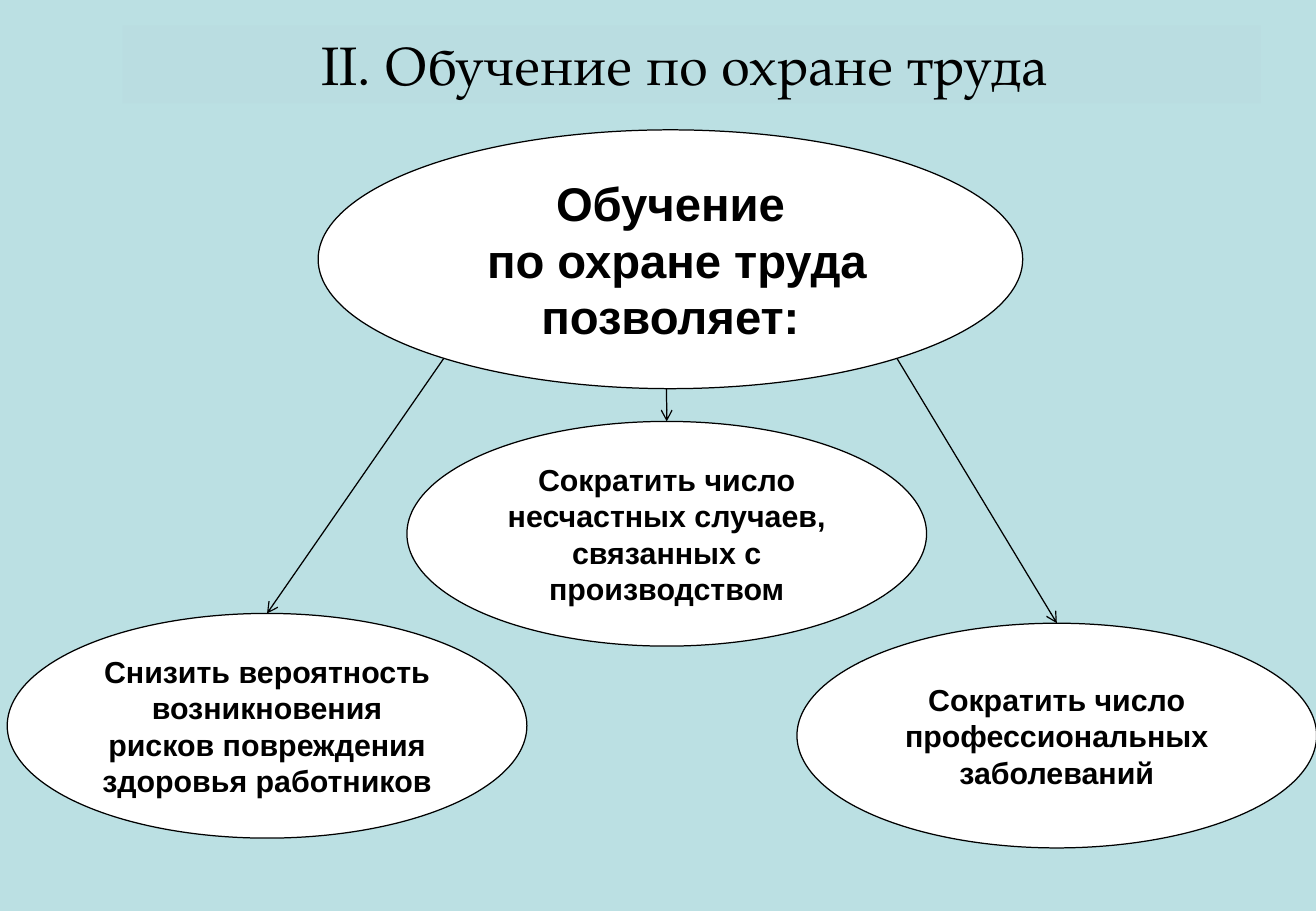
import pptx
import pptx.util
import pptx.dml.color
import pptx.enum.shapes
import pptx.enum.text
import pptx.oxml
import pptx.oxml.ns
from dataclasses import dataclass

Pt = pptx.util.Pt
Color = pptx.dml.color.RGBColor.from_string
Anchor = pptx.enum.text.MSO_ANCHOR
qn = pptx.oxml.ns.qn


@dataclass(frozen=True)
class Theme:
    back: str = "BBE0E3"
    band: str = "BADDE1"
    oval: str = "FFFFFF"
    ink: str = "000000"
    head: str = "TeX Gyre Pagella"
    body: str = "Arial"
    title: float = 32
    root: float = 28
    goal: float = 18
    line: float = 0.75


THEME = Theme()
ROOT = (188.6, 77, 417.6, 153.4)
GOAL = (308, 133.2)
GOALS = [  # left, top, arrow start, paragraphs
    (4.3, 363.6, (288, 176.4),
     ["Снизить вероятность возникновения рисков повреждения здоровья работников"]),
    (241.2, 249.8, (394.8, 188),
     ["Сократить число несчастных случаев,", "связанных с производством"]),
    (472.4, 369.4, (513.4, 182.2),
     ["Сократить число профессиональных заболеваний"]),
]


def write(shape, paras, font, size, bold, anchor):
    frame = shape.text_frame
    frame.word_wrap = True
    frame.auto_size = pptx.enum.text.MSO_AUTO_SIZE.NONE
    frame.vertical_anchor = anchor
    frame.margin_left = frame.margin_right = Pt(7.2)
    frame.margin_top = frame.margin_bottom = Pt(3.6)
    for i, text in enumerate(paras):
        para = frame.paragraphs[0] if i == 0 else frame.add_paragraph()
        para.alignment = pptx.enum.text.PP_ALIGN.CENTER
        run = para.add_run()
        run.text = text
        run.font.name = font
        run.font.size = Pt(size)
        run.font.bold = bold
        run.font.color.rgb = Color(THEME.ink)


def paint(shape, color):
    shape.fill.solid()
    shape.fill.fore_color.rgb = Color(color)


def ink(line):
    line.color.rgb = Color(THEME.ink)
    line.width = Pt(THEME.line)


def title(slide, box):
    shape = slide.shapes.title
    shape.left, shape.top, shape.width, shape.height = map(Pt, box)
    paint(shape, THEME.band)
    write(shape, ["II. Обучение по охране труда "], THEME.head, THEME.title,
          False, Anchor.TOP)


def oval(slide, box, paras, size):
    shape = slide.shapes.add_shape(
        pptx.enum.shapes.MSO_SHAPE.OVAL, *map(Pt, box))
    shape.shadow.inherit = False
    paint(shape, THEME.oval)
    ink(shape.line)
    write(shape, paras, THEME.body, size, True, Anchor.MIDDLE)
    return shape


def arrow(slide, start, end):
    link = slide.shapes.add_connector(
        pptx.enum.shapes.MSO_CONNECTOR.STRAIGHT, *map(Pt, start + end))
    ink(link.line)
    props = link.line._get_or_add_ln()
    props.append(props.makeelement(qn("a:tailEnd"), {"type": "arrow"}))
    area = props.getparent()
    area.append(area.makeelement(qn("a:effectLst"), {}))
    return link


def goal(slide, box, start, paras):
    """Place an oval and, behind it, the arrow that leads to its top."""
    left, top, width, _ = box
    link = arrow(slide, start, (left + width / 2, top))
    link.end_connect(oval(slide, box, paras, THEME.goal), 0)


def main():
    deck = pptx.Presentation()
    deck.slide_width, deck.slide_height = Pt(780), Pt(540)
    slide = deck.slides.add_slide(deck.slide_layouts[5])
    paint(slide.background, THEME.back)
    title(slide, (72.7, 15.1, 674.6, 46.1))
    for left, top, start, paras in GOALS:
        goal(slide, (left, top) + GOAL, start, paras)
    oval(slide, ROOT, ["Обучение", " по охране труда", "позволяет:"], THEME.root)
    deck.save("out.pptx")


if __name__ == "__main__":
    main()
